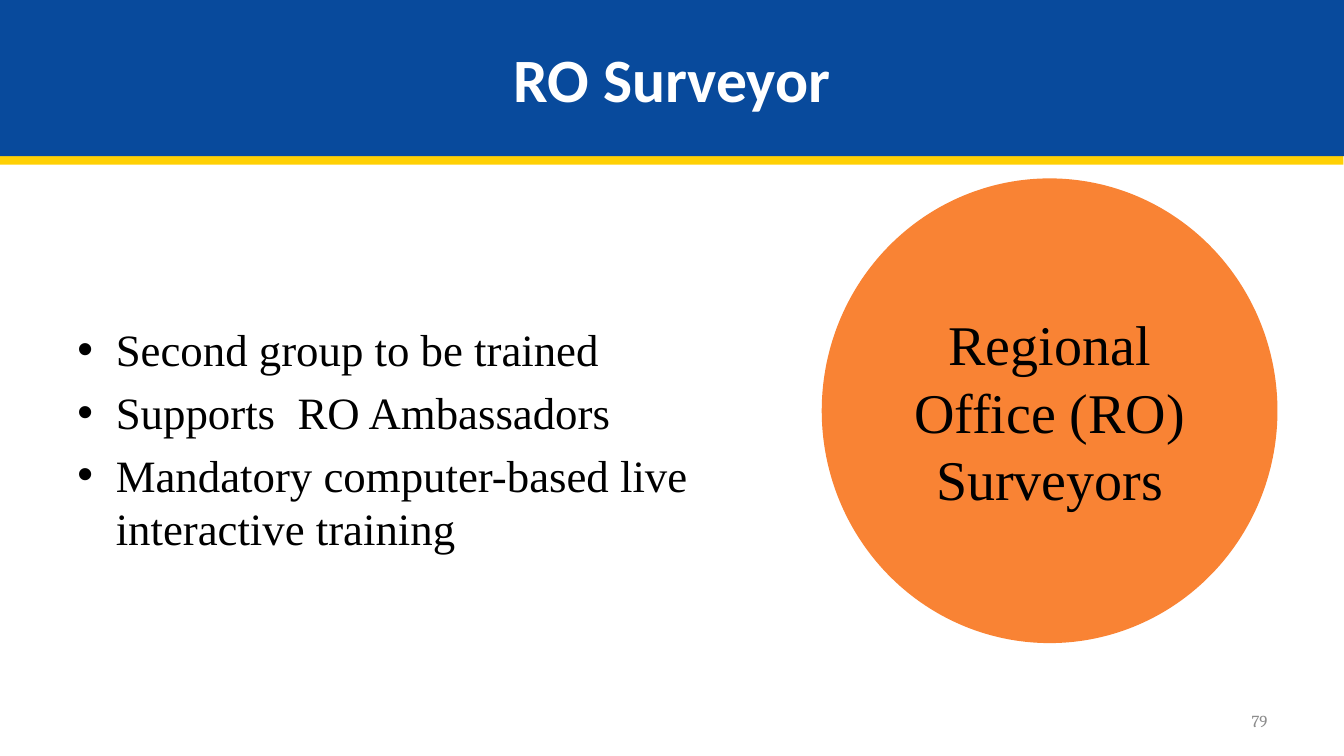
from lxml.etree import SubElement
from pptx import Presentation
from pptx.dml.color import RGBColor
from pptx.enum.shapes import MSO_SHAPE as Kind
from pptx.enum.text import MSO_ANCHOR as Anchor, PP_ALIGN as Align
from pptx.oxml.ns import qn
from pptx.util import Inches, Pt

BLUE = RGBColor(0x08, 0x4A, 0x9C)
GOLD = RGBColor(0xFF, 0xD0, 0x04)
ORANGE = RGBColor(0xF9, 0x83, 0x34)
BLACK = RGBColor(0, 0, 0)
WHITE = RGBColor(255, 255, 255)
GREY = RGBColor(0x8C, 0x8C, 0x8C)
SERIF = "Times New Roman"

TITLE = "RO Surveyor"
POINTS = [
    "Second group to be trained",
    "Supports  RO Ambassadors",
    "Mandatory computer-based live interactive training",
]
GROUP = "Regional Office (RO)\vSurveyors"
PAGE = "79"

deck = Presentation()
deck.slide_width, deck.slide_height = Inches(13.33), Inches(7.5)
slide = deck.slides.add_slide(deck.slide_layouts[6])


def write(shape, lines, size, name, color, align, bold=False, bullet=False):
    frame = shape.text_frame
    frame.word_wrap = True
    frame.vertical_anchor = Anchor.MIDDLE
    for i, line in enumerate(lines):
        para = frame.add_paragraph() if i else frame.paragraphs[0]
        para.text = line
        para.alignment = align
        if i:
            para.space_before = Pt(size * 0.2)
        if bullet:
            props = para._p.get_or_add_pPr()
            props.set("marL", str(Inches(0.38)))
            props.set("indent", str(Inches(-0.38)))
            SubElement(props, qn("a:buFont"), typeface="Arial")
            SubElement(props, qn("a:buChar"), char="•")
        font = para.font
        font.size, font.name, font.bold = Pt(size), name, bold
        font.color.rgb = color


def add_box(*place):
    return slide.shapes.add_textbox(*map(Inches, place))


def add_solid(kind, color, *place):
    shape = slide.shapes.add_shape(kind, *map(Inches, place))
    shape.shadow.inherit = False
    shape.fill.solid()
    shape.fill.fore_color.rgb = color
    shape.line.fill.background()
    return shape


def cast(shape, color, dist, angle):
    effects = shape._element.spPr.find(qn("a:effectLst"))
    shade = SubElement(effects, qn("a:outerShdw"), blurRad="0",
                       dist=str(Pt(dist)), dir=str(angle * 60000),
                       algn="t", rotWithShape="0")
    SubElement(shade, qn("a:srgbClr"), val=str(color))


body = add_box(0.67, 2, 7.48, 4.7)
write(body, POINTS, 32, SERIF, BLACK, Align.LEFT, bullet=True)

number = add_box(9.56, 6.95, 3.11, 0.4)
write(number, [PAGE], 12, "Cambria", GREY, Align.RIGHT)

circle = add_solid(Kind.FLOWCHART_CONNECTOR, ORANGE, 8.15, 1.77, 4.52, 4.61)
write(circle, [GROUP], 40, SERIF, BLACK, Align.CENTER)

banner = add_solid(Kind.RECTANGLE, BLUE, 0, 0, 13.33, 1.55)
cast(banner, GOLD, 6, 94)
write(banner, [TITLE], 44, "Calibri", WHITE, Align.CENTER, bold=True)

deck.save("out.pptx")
